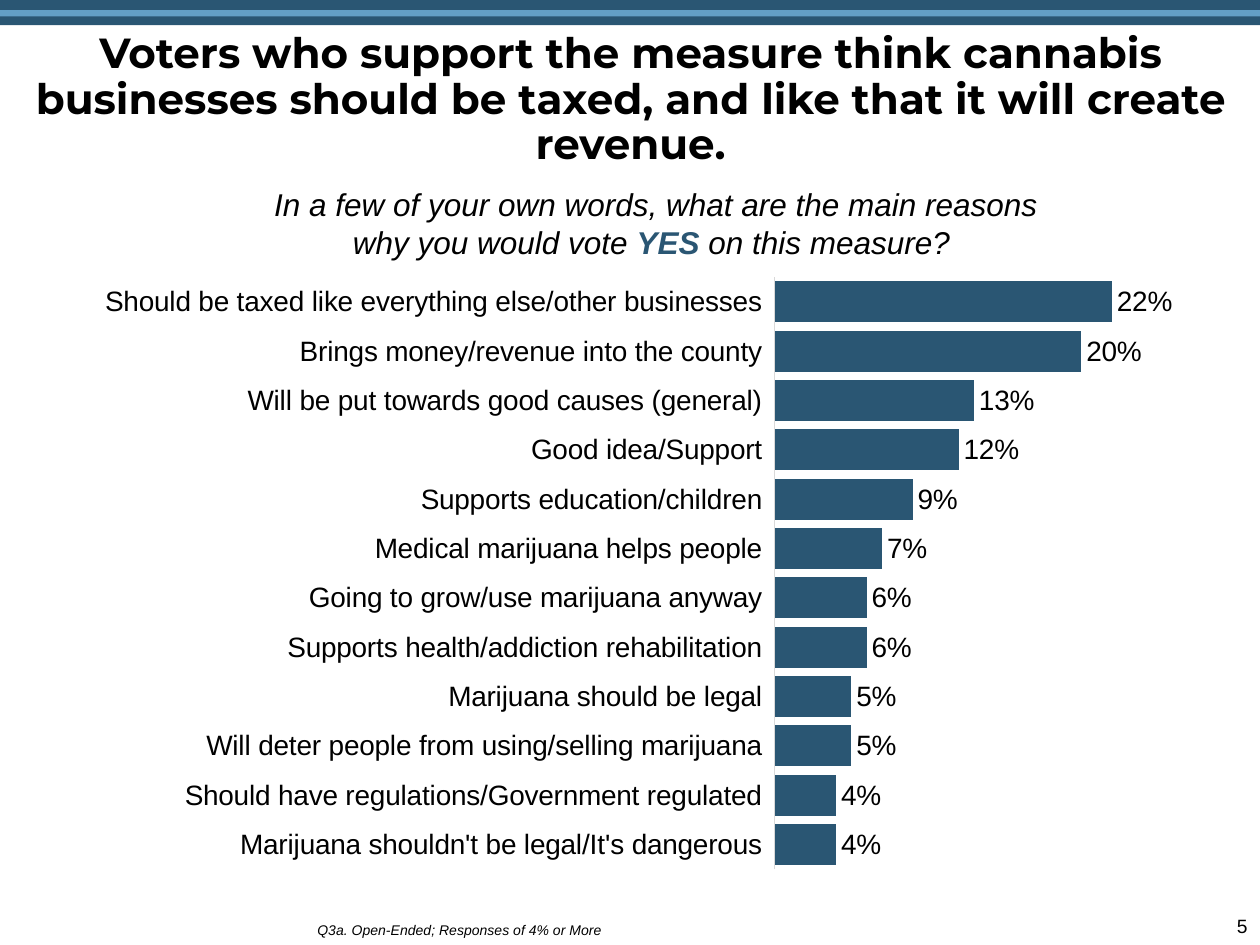
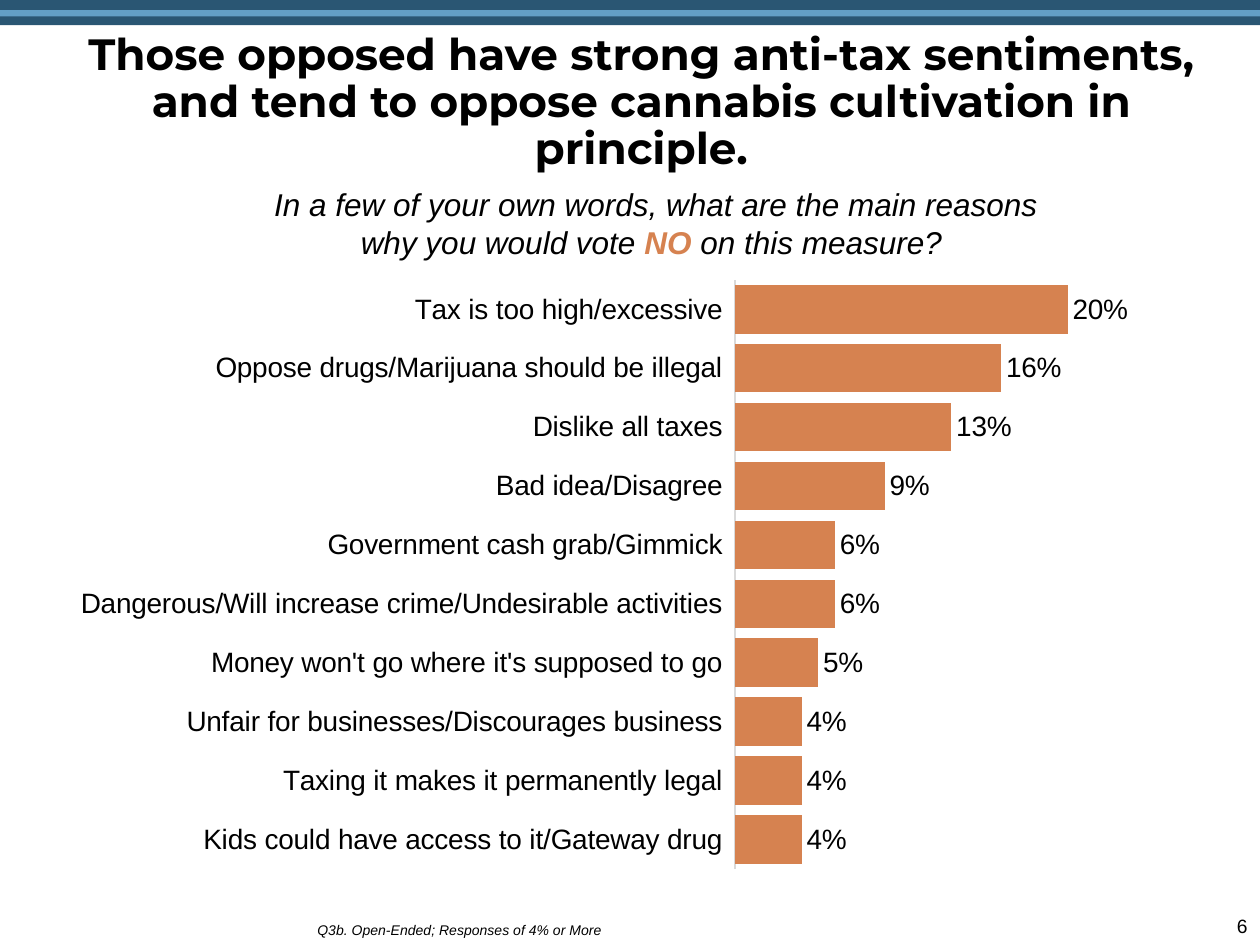
from typing import NamedTuple

from pptx import Presentation
from pptx.chart.data import CategoryChartData
from pptx.dml.color import RGBColor
from pptx.enum.chart import XL_CHART_TYPE, XL_LABEL_POSITION, XL_TICK_LABEL_POSITION, XL_TICK_MARK
from pptx.enum.shapes import MSO_SHAPE
from pptx.enum.text import MSO_ANCHOR, PP_ALIGN
from pptx.oxml import parse_xml
from pptx.oxml.ns import nsdecls
from pptx.util import Inches, Pt

# The slide is a grid of 100 columns by 75 rows
CELL = Inches(0.1)
COLUMNS, ROWS = 100, 75

NAVY, SKY, ORANGE = "2A5673", "639FC6", "D68250"
BLACK, AXIS_GRAY = "000000", "D9D9D9"
BODY_FONT, TITLE_FONT = "Arial", "Montserrat"
LABEL_SIZE = 16
AXIS_MAXIMUM = 0.3


class Box(NamedTuple):
    left: float
    top: float
    width: float
    height: float

    def inner(self, left, top, width, height):
        """Box at shares of this one."""
        return Box(self.left + left * self.width, self.top + top * self.height,
                   width * self.width, height * self.height)

    def shares_of(self, outer):
        """This box as shares of an outer one."""
        return Box((self.left - outer.left) / outer.width,
                   (self.top - outer.top) / outer.height,
                   self.width / outer.width, self.height / outer.height)

    def lengths(self):
        return [round(value * CELL) for value in self]


class Run(NamedTuple):
    text: str
    color: str = BLACK
    bold: bool = False


PAGE = Box(0, 0, COLUMNS, ROWS)
BAND = Box(0, 0, COLUMNS, 2)
QUESTION = Box(18.3, 14.2, 67.5, 7.1)
FOOTNOTE = Box(24.2, 70.6, 72.9, 4.4)
PAGE_NUMBER = Box(85.2, 72.1, 14.8, 2.9)


def color_of(hex_string):
    return RGBColor.from_string(hex_string)


def style_font(font, size, color=BLACK, name=BODY_FONT, bold=False, italic=False):
    font.size, font.name = Pt(size), name
    font.bold, font.italic = bold, italic
    font.color.rgb = color_of(color)


def add_rectangle(slide, box, color):
    shape = slide.shapes.add_shape(MSO_SHAPE.RECTANGLE, *box.lengths())
    shape.shadow.inherit = False
    shape.fill.solid()
    shape.fill.fore_color.rgb = color_of(color)
    shape.line.fill.background()


def add_text(slide, box, runs, size, name=BODY_FONT, italic=False,
             align=PP_ALIGN.LEFT, anchor=MSO_ANCHOR.TOP, line_spacing=1.0):
    frame = slide.shapes.add_textbox(*box.lengths()).text_frame
    frame.word_wrap = True
    frame.vertical_anchor = anchor
    paragraph = frame.paragraphs[0]
    paragraph.alignment, paragraph.line_spacing = align, line_spacing
    for text, color, bold in runs:
        run = paragraph.add_run()
        run.text = text
        style_font(run.font, size, color, name, bold, italic)


def add_band(slide, box):
    add_rectangle(slide, box, NAVY)
    add_rectangle(slide, box.inner(0, 0.4, 1, 0.25), SKY)


def add_question(slide, box, vote, color):
    runs = [
        Run("In a few of your own words, what are the main reasons why you would vote "),
        Run(vote, color, True),
        Run(" on this measure? "),
    ]
    add_text(slide, box, runs, 18, italic=True, align=PP_ALIGN.CENTER)


def set_plot_area(chart, shares):
    """Fix the inner plot area at shares of the chart."""
    values = "".join(f'<c:{key} val="{share:.4f}"/>' for key, share in zip("xywh", shares))
    layout = parse_xml(
        f'<c:layout {nsdecls("c")}><c:manualLayout><c:layoutTarget val="inner"/>'
        f'<c:xMode val="edge"/><c:yMode val="edge"/>{values}'
        "</c:manualLayout></c:layout>")
    plot_area = chart.element.chart.plotArea
    for old_layout in plot_area.findall(layout.tag):
        plot_area.remove(old_layout)
    plot_area.insert(0, layout)


def add_reasons_chart(slide, box, plot_box, reasons, color):
    data = CategoryChartData(number_format="0%")
    data.categories = [reason for reason, _ in reasons]
    data.add_series("Series 1", [percent / 100 for _, percent in reasons])
    chart = slide.shapes.add_chart(
        XL_CHART_TYPE.BAR_CLUSTERED, *box.lengths(), data).chart
    chart.has_legend = chart.has_title = False
    style_font(chart.font, 10)
    set_plot_area(chart, plot_box.shares_of(box))

    # Reasons, from the top down
    axis = chart.category_axis
    axis.reverse_order = True
    axis.has_major_gridlines = False
    axis.major_tick_mark = axis.minor_tick_mark = XL_TICK_MARK.NONE
    axis.tick_label_position = XL_TICK_LABEL_POSITION.LOW
    axis.format.line.color.rgb = color_of(AXIS_GRAY)
    axis.format.line.width = Pt(0.75)
    style_font(axis.tick_labels.font, LABEL_SIZE)

    # Hidden percent scale
    scale = chart.value_axis
    scale.minimum_scale, scale.maximum_scale = 0, AXIS_MAXIMUM
    scale.major_unit = AXIS_MAXIMUM / 2
    scale.has_major_gridlines = False
    scale.visible = False

    # Bars and their values
    bars = chart.plots[0]
    bars.gap_width = 21
    bars.vary_by_categories = False
    fill = bars.series[0].format.fill
    fill.solid()
    fill.fore_color.rgb = color_of(color)
    bars.has_data_labels = True
    labels = bars.data_labels
    labels.show_value = True
    labels.number_format, labels.number_format_is_linked = "0%", False
    labels.position = XL_LABEL_POSITION.OUTSIDE_END
    style_font(labels.font, LABEL_SIZE)


def add_reasons_slide(presentation, content):
    slide = presentation.slides.add_slide(presentation.slide_layouts[6])
    add_band(slide, BAND)
    add_text(slide, PAGE_NUMBER, [Run(content["page"])], 11, align=PP_ALIGN.RIGHT)
    add_reasons_chart(slide, content["chart_box"], content["plot_box"],
                      content["reasons"], content["color"])
    add_text(slide, FOOTNOTE, [Run(content["footnote"])], 8, italic=True,
             anchor=MSO_ANCHOR.BOTTOM, line_spacing=0.9)
    add_question(slide, QUESTION, content["vote"], content["color"])
    add_text(slide, content["title_box"], [Run(content["title"], bold=True)],
             content["title_size"], TITLE_FONT, align=PP_ALIGN.CENTER,
             line_spacing=0.9)


YES_SLIDE = {
    "page": "5",
    "title": "Voters who support the measure think cannabis businesses should be "
             "taxed, and like that it will create revenue.",
    "title_box": Box(1.5, 2.1, 97.1, 12.5),
    "title_size": 24,
    "vote": "YES",
    "color": NAVY,
    "footnote": "Q3a. Open-Ended; Responses of 4% or More",
    "chart_box": Box(-10.4, 19.2, 111.3, 53.3),
    "plot_box": Box(61.5, 22, 36.5, 47),
    "reasons": [
        ("Should be taxed like everything else/other businesses", 22),
        ("Brings money/revenue into the county", 20),
        ("Will be put towards good causes (general)", 13),
        ("Good idea/Support", 12),
        ("Supports education/children", 9),
        ("Medical marijuana helps people", 7),
        ("Going to grow/use marijuana anyway", 6),
        ("Supports health/addiction rehabilitation", 6),
        ("Marijuana should be legal", 5),
        ("Will deter people from using/selling marijuana", 5),
        ("Should have regulations/Government regulated", 4),
        ("Marijuana shouldn't be legal/It's dangerous", 4),
    ],
}

NO_SLIDE = {
    "page": "6",
    "title": "Those opposed have strong anti-tax sentiments, and tend to oppose "
             "cannabis cultivation in principle.",
    "title_box": Box(5.8, 2.1, 90.2, 12.5),
    "title_size": 25,
    "vote": "NO",
    "color": ORANGE,
    "footnote": "Q3b. Open-Ended; Responses of 4% or More",
    "chart_box": Box(-11.7, 19.2, 112.6, 53.3),
    "plot_box": Box(58.35, 22.2, 39.6, 46.8),
    "reasons": [
        ("Tax is too high/excessive", 20),
        ("Oppose drugs/Marijuana should be illegal", 16),
        ("Dislike all taxes", 13),
        ("Bad idea/Disagree", 9),
        ("Government cash grab/Gimmick", 6),
        ("Dangerous/Will increase crime/Undesirable activities", 6),
        ("Money won't go where it's supposed to go", 5),
        ("Unfair for businesses/Discourages business", 4),
        ("Taxing it makes it permanently legal", 4),
        ("Kids could have access to it/Gateway drug", 4),
    ],
}


def main():
    presentation = Presentation()
    presentation.slide_width, presentation.slide_height = PAGE.lengths()[2:]
    for content in (YES_SLIDE, NO_SLIDE):
        add_reasons_slide(presentation, content)
    presentation.save("out.pptx")


if __name__ == "__main__":
    main()
